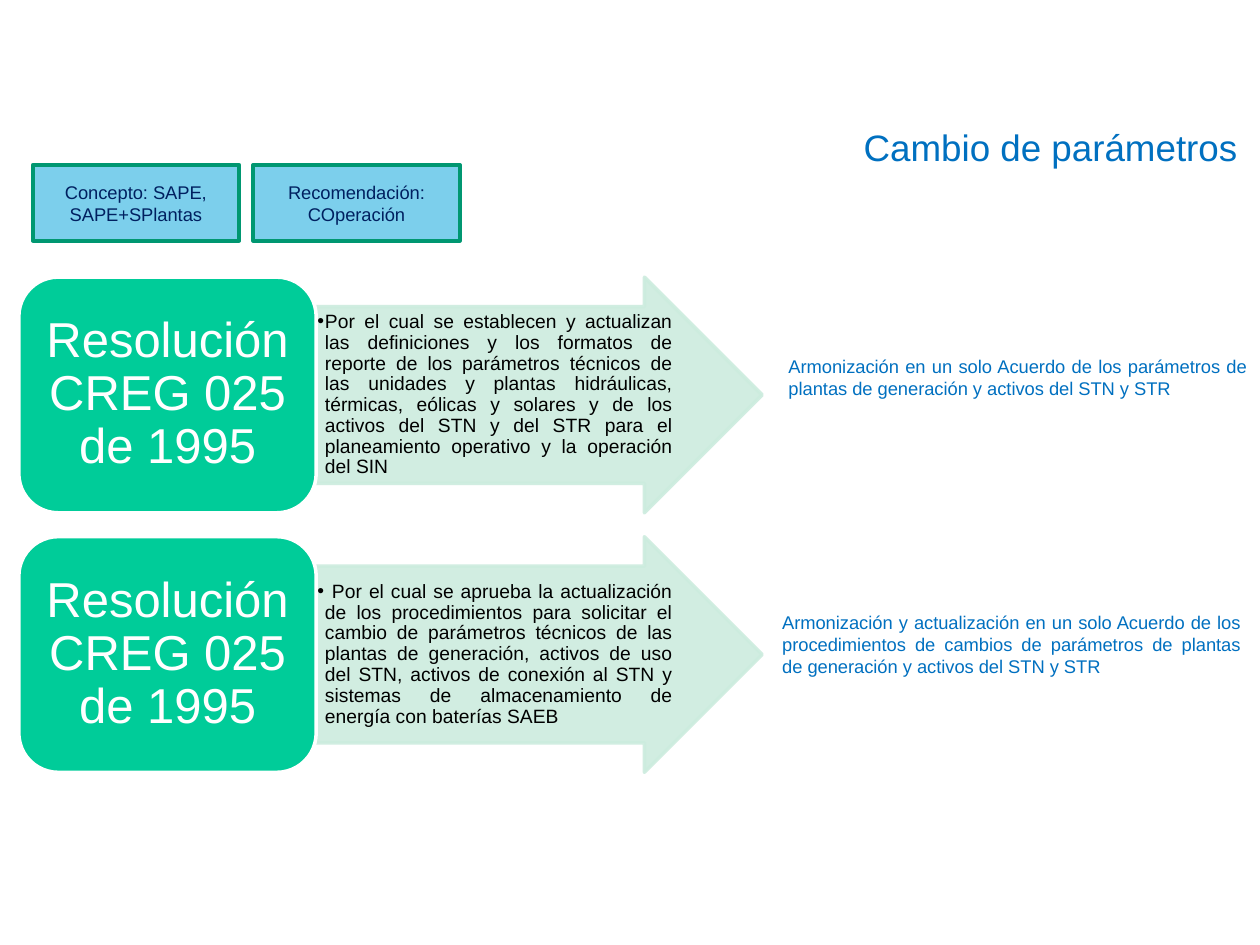
import pptx
import pptx.util
import pptx.dml.color
import pptx.enum.shapes
import pptx.enum.text
import pptx.oxml
import pptx.oxml.ns

Inches = pptx.util.Inches
Pt = pptx.util.Pt
SHAPE = pptx.enum.shapes.MSO_SHAPE
ALIGN = pptx.enum.text.PP_ALIGN
ANCHOR = pptx.enum.text.MSO_ANCHOR

# Content
TITLE = "Cambio de parámetros "
TAGS = ["Concepto: SAPE, SAPE+SPlantas", "Recomendación: COperación"]
ROWS = [
    {
        "source": "Resolución CREG 025 de 1995",
        "purpose": "Por el cual se establecen y actualizan las definiciones y los formatos "
                   "de reporte de los parámetros técnicos de las unidades y plantas "
                   "hidráulicas, térmicas, eólicas y solares y de los activos del STN y del "
                   "STR para el planeamiento operativo y la operación del SIN",
        "outcome": "Armonización en un solo Acuerdo de los parámetros de plantas de "
                   "generación y activos del STN y STR",
        "outcome_box": (6.16, 2.77, 3.84, 0.45),
    },
    {
        "source": "Resolución CREG 025 de 1995",
        "purpose": " Por el cual se aprueba la actualización de los procedimientos para "
                   "solicitar el cambio de parámetros técnicos de las plantas de generación, "
                   "activos de uso del STN, activos de conexión al STN y sistemas de "
                   "almacenamiento de energía con baterías SAEB",
        "outcome": "Armonización y actualización en un solo Acuerdo de los procedimientos "
                   "de cambios de parámetros de plantas de generación y activos del STN y STR",
        "outcome_box": (6.11, 4.8, 3.84, 0.63),
    },
]

THEME = {
    "font": "Arial",
    "title": {"size": 21, "color": "0070C0", "alignment": ALIGN.RIGHT},
    "tag": {"size": 10.5, "color": "002060", "alignment": ALIGN.CENTER,
            "fill": "7CCFEC", "line": "009771", "line_width": 2.25},
    "source": {"size": 28, "color": "FFFFFF", "alignment": ALIGN.CENTER,
               "line_spacing": 0.9, "fill": "00CC99", "line": "FFFFFF", "line_width": 2},
    "purpose": {"size": 11, "color": "000000", "alignment": ALIGN.JUSTIFY,
                "line_spacing": 0.9, "fill": "CCECDE", "line": "CCECDE", "line_width": 2,
                "opacity": 90},
    "outcome": {"size": 10.5, "color": "0070C0", "alignment": ALIGN.JUSTIFY},
}

# Layout in inches
TAG_LEFT, TAG_TOP, TAG_WIDTH, TAG_HEIGHT, TAG_STEP = 0.26, 1.31, 1.64, 0.6, 1.75
ROW_LEFT, ROW_TOP, ROW_HEIGHT, ROW_STEP = 0.15, 2.2, 1.87, 2.06
SOURCE_WIDTH, ARROW_WIDTH = 2.36, 3.54
SOURCE_MARGINS = (0.12, 0.06, 0.12, 0.06)
ARROW_MARGINS = (0.01, 0.01, 0.01, 0.01)
BULLET_INDENT = 0.06


def rgb(value):
    return pptx.dml.color.RGBColor.from_string(value)


def write(shape, text, style, margins=None):
    """Put one styled paragraph into a shape and return the paragraph."""
    frame = shape.text_frame
    frame.word_wrap = True
    for side, margin in zip(("left", "top", "right", "bottom"), margins or ()):
        setattr(frame, f"margin_{side}", Inches(margin))
    paragraph = frame.paragraphs[0]
    for name in ("alignment", "line_spacing"):
        if name in style:
            setattr(paragraph, name, style[name])
    run = paragraph.add_run()
    run.text = text
    for name, value in {"name": THEME["font"], "size": Pt(style["size"])}.items():
        setattr(run.font, name, value)
    run.font.color.rgb = rgb(style["color"])
    return paragraph


def add_box(slide, box, text, style):
    return write(slide.shapes.add_textbox(*map(Inches, box)), text, style)


def add_block(slide, kind, box, text, style, margins=None):
    """Add a filled, outlined shape with text and return both."""
    shape = slide.shapes.add_shape(kind, *map(Inches, box))
    shape.shadow.inherit = False
    shape.fill.solid()
    shape.fill.fore_color.rgb = rgb(style["fill"])
    shape.line.color.rgb = rgb(style["line"])
    shape.line.width = Pt(style["line_width"])
    shape.text_frame.vertical_anchor = ANCHOR.MIDDLE
    if "opacity" in style:
        for color in shape.element.spPr.iter(pptx.oxml.ns.qn("a:srgbClr")):
            add_xml(color, "alpha", f'val="{style["opacity"] * 1000}"')
    return shape, write(shape, text, style, margins)


def add_xml(parent, tag, attributes, content=""):
    namespace = pptx.oxml.ns.nsdecls("a")
    parent.append(pptx.oxml.parse_xml(
        f"<a:{tag} {namespace} {attributes}>{content}</a:{tag}>"))


def add_bullet(paragraph, color):
    paragraph.level = 1
    properties = paragraph._p.get_or_add_pPr()
    properties.set("marL", str(Inches(BULLET_INDENT)))
    properties.set("indent", str(-Inches(BULLET_INDENT)))
    add_xml(properties, "buClr", "", f'<a:srgbClr val="{color}"/>')
    add_xml(properties, "buFont", f'typeface="{THEME["font"]}"')
    add_xml(properties, "buChar", 'char="•"')


def main():
    presentation = pptx.Presentation()
    presentation.slide_width, presentation.slide_height = Inches(10), Inches(7.5)
    slide = presentation.slides.add_slide(presentation.slide_layouts[6])

    # Title
    add_box(slide, (5.87, 0.94, 4.13, 0.45), TITLE, THEME["title"])

    # One row per resolution: arrow, source block, outcome
    for index, row in enumerate(ROWS):
        top = ROW_TOP + index * ROW_STEP
        arrow, paragraph = add_block(
            slide, SHAPE.RIGHT_ARROW,
            (ROW_LEFT + SOURCE_WIDTH, top, ARROW_WIDTH, ROW_HEIGHT),
            row["purpose"], THEME["purpose"], ARROW_MARGINS)
        arrow.adjustments[0], arrow.adjustments[1] = 0.75, 0.5
        add_bullet(paragraph, THEME["purpose"]["color"])
        add_block(slide, SHAPE.ROUNDED_RECTANGLE,
                  (ROW_LEFT, top, SOURCE_WIDTH, ROW_HEIGHT),
                  row["source"], THEME["source"], SOURCE_MARGINS)
        add_box(slide, row["outcome_box"], row["outcome"], THEME["outcome"])

    # Tags above the rows
    for index, tag in enumerate(TAGS):
        add_block(slide, SHAPE.RECTANGLE,
                  (TAG_LEFT + index * TAG_STEP, TAG_TOP, TAG_WIDTH, TAG_HEIGHT),
                  tag, THEME["tag"])

    presentation.save("out.pptx")


if __name__ == "__main__":
    main()
